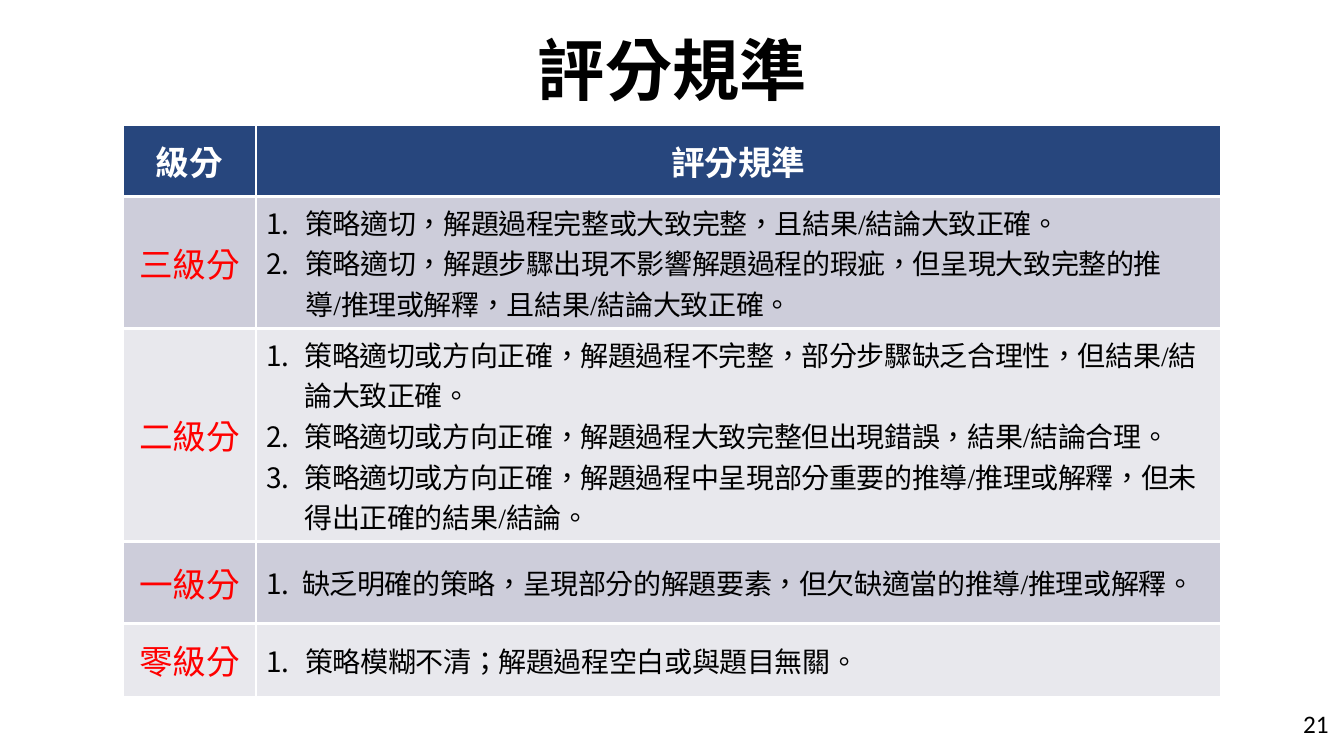
"""Build the scoring rubric slide."""
from lxml.etree import SubElement
from pptx import Presentation
from pptx.dml.color import RGBColor
from pptx.enum.text import MSO_ANCHOR, PP_ALIGN
from pptx.oxml.ns import qn
from pptx.util import Cm, Pt

BLACK = RGBColor(0x00, 0x00, 0x00)
WHITE = RGBColor(0xFF, 0xFF, 0xFF)
RED = RGBColor(0xFF, 0x00, 0x00)
NAVY = RGBColor(0x27, 0x46, 0x7D)
LAVENDER = RGBColor(0xCD, 0xCD, 0xDA)
PALE = RGBColor(0xE8, 0xE8, 0xED)

HAN_FONT = "Noto Sans CJK SC"
TITLE = {"name": HAN_FONT, "size": Pt(48), "bold": True, "color": BLACK}
HEADER = {"name": HAN_FONT, "size": Pt(24), "bold": True, "color": WHITE}
LEVEL = {"name": "Times New Roman", "size": Pt(24), "bold": False, "color": RED}
CRITERION = {"name": "Times New Roman", "size": Pt(20), "bold": False, "color": BLACK}
PAGE = {"name": "Calibri", "size": Pt(18), "bold": False, "color": BLACK}

HEADINGS = ("級分", "評分規準")
COLUMN_WIDTHS = (Cm(3.35), Cm(24.31))
ROW_HEIGHTS = (Cm(1.8), Cm(3.12), Cm(5.21), Cm(2.06), Cm(1.83))
RUBRIC = (
    ("三級分", Cm(0.99), (
        "策略適切，解題過程完整或大致完整，且結果/結論大致正確。",
        "策略適切，解題步驟出現不影響解題過程的瑕疵，但呈現大致完整的推導/推理或解釋，且結果/結論大致正確。",
    )),
    ("二級分", Cm(0.97), (
        "策略適切或方向正確，解題過程不完整，部分步驟缺乏合理性，但結果/結論大致正確。",
        "策略適切或方向正確，解題過程大致完整但出現錯誤，結果/結論合理。",
        "策略適切或方向正確，解題過程中呈現部分重要的推導/推理或解釋，但未得出正確的結果/結論。",
    )),
    ("一級分", Cm(0.91), (
        "缺乏明確的策略，呈現部分的解題要素，但欠缺適當的推導/推理或解釋。",
    )),
    ("零級分", Cm(0.99), (
        "策略模糊不清；解題過程空白或與題目無關。",
    )),
)


def write(paragraph, wording, style, spacing=0):
    """Add a run of text with the given style."""
    run = paragraph.add_run()
    run.text = wording
    for attribute, value in style.items():
        if attribute == "color":
            run.font.color.rgb = value
        else:
            setattr(run.font, attribute, value)
    properties = run.font._element
    properties.set("lang", "zh-TW")
    properties.set("spc", str(spacing))
    SubElement(properties, qn("a:ea"), typeface=HAN_FONT)


def number(paragraph, indent):
    """Give a paragraph an automatic number and a hanging indent."""
    properties = paragraph._p.get_or_add_pPr()
    properties.set("marL", str(indent))
    properties.set("indent", str(-indent))
    SubElement(properties, qn("a:buFont"), typeface=HAN_FONT)
    SubElement(properties, qn("a:buAutoNum"), type="arabicPeriod")


def dress(cell, fill, widths):
    """Set the white borders, fill and anchor of a cell."""
    properties = cell._tc.get_or_add_tcPr()
    for side, width in widths.items():
        border = SubElement(properties, qn(f"a:ln{side}"), w=str(Pt(width)))
        solid = SubElement(border, qn("a:solidFill"))
        SubElement(solid, qn("a:srgbClr"), val=str(WHITE))
    cell.fill.solid()
    cell.fill.fore_color.rgb = fill
    cell.vertical_anchor = MSO_ANCHOR.MIDDLE


def border_widths(row, column):
    """Return the border widths in points for a cell position."""
    tops = (1, 3, 2.25, 2.25, 2.25, 1)
    sides = (1, 2.25, 1)
    return {"L": sides[column], "R": sides[column + 1],
            "T": tops[row], "B": tops[row + 1]}


def write_centred(cell, wording, style):
    """Write one centred line in a cell."""
    line = cell.text_frame.paragraphs[0]
    line.alignment = PP_ALIGN.CENTER
    write(line, wording, style)


def write_criteria(cell, criteria, indent):
    """Write a numbered list of criteria in a cell."""
    frame = cell.text_frame
    for position, criterion in enumerate(criteria):
        line = frame.add_paragraph() if position else frame.paragraphs[0]
        number(line, indent)
        write(line, criterion, CRITERION, -30)


def add_title(slide, wording):
    """Place and format the slide title."""
    title = slide.shapes.title
    placement = {"left": Cm(2.34), "top": Cm(0.03), "width": Cm(29.21), "height": Cm(3.68)}
    for attribute, value in placement.items():
        setattr(title, attribute, value)
    title.text_frame.vertical_anchor = MSO_ANCHOR.MIDDLE
    heading = title.text_frame.paragraphs[0]
    heading.alignment = PP_ALIGN.CENTER
    heading.line_spacing = 0.9
    write(heading, wording, TITLE)


def add_rubric(slide):
    """Add the table of levels and their criteria."""
    rubric = slide.shapes.add_table(
        len(ROW_HEIGHTS), len(COLUMN_WIDTHS), Cm(3.1), Cm(3.15),
        sum(COLUMN_WIDTHS), sum(ROW_HEIGHTS)).table
    for column, width in zip(rubric.columns, COLUMN_WIDTHS):
        column.width = width
    for row, height in zip(rubric.rows, ROW_HEIGHTS):
        row.height = height
    for column, heading in enumerate(HEADINGS):
        write_centred(rubric.cell(0, column), heading, HEADER)
    for row, (level, indent, criteria) in enumerate(RUBRIC, 1):
        write_centred(rubric.cell(row, 0), level, LEVEL)
        write_criteria(rubric.cell(row, 1), criteria, indent)
    for row in range(len(ROW_HEIGHTS)):
        fill = NAVY if row == 0 else (PALE, LAVENDER)[row % 2]
        for column in range(len(COLUMN_WIDTHS)):
            dress(rubric.cell(row, column), fill, border_widths(row, column))


def add_page_number(slide, page):
    """Add the page number in the lower right corner."""
    frame = slide.shapes.add_textbox(Cm(32.59), Cm(17.73), Cm(1.45), Cm(1.02)).text_frame
    frame.word_wrap = True
    frame.vertical_anchor = MSO_ANCHOR.MIDDLE
    write(frame.paragraphs[0], page, PAGE)


def main():
    """Create and save the presentation."""
    deck = Presentation()
    deck.slide_width = Cm(33.87)
    deck.slide_height = Cm(19.05)
    slide = deck.slides.add_slide(deck.slide_layouts[5])
    add_title(slide, "評分規準")
    add_rubric(slide)
    add_page_number(slide, "21")
    deck.save("out.pptx")


if __name__ == "__main__":
    main()
